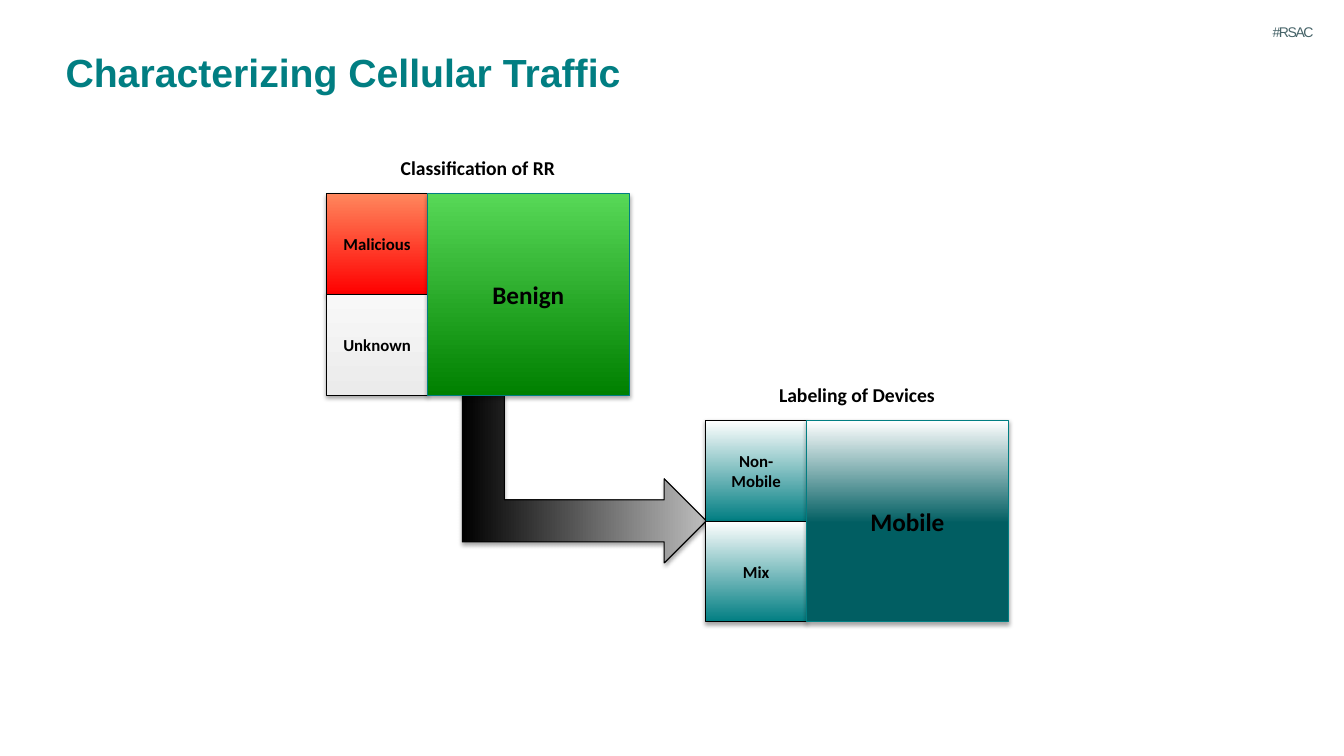
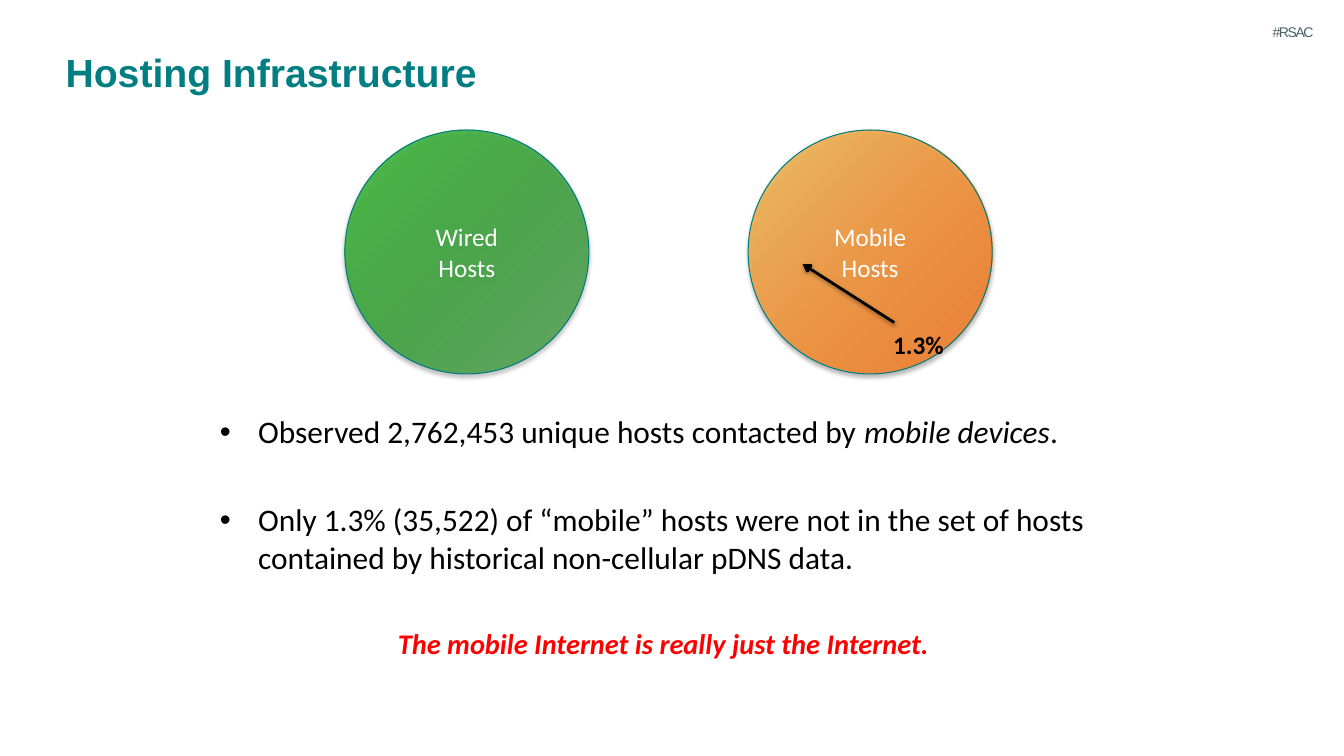
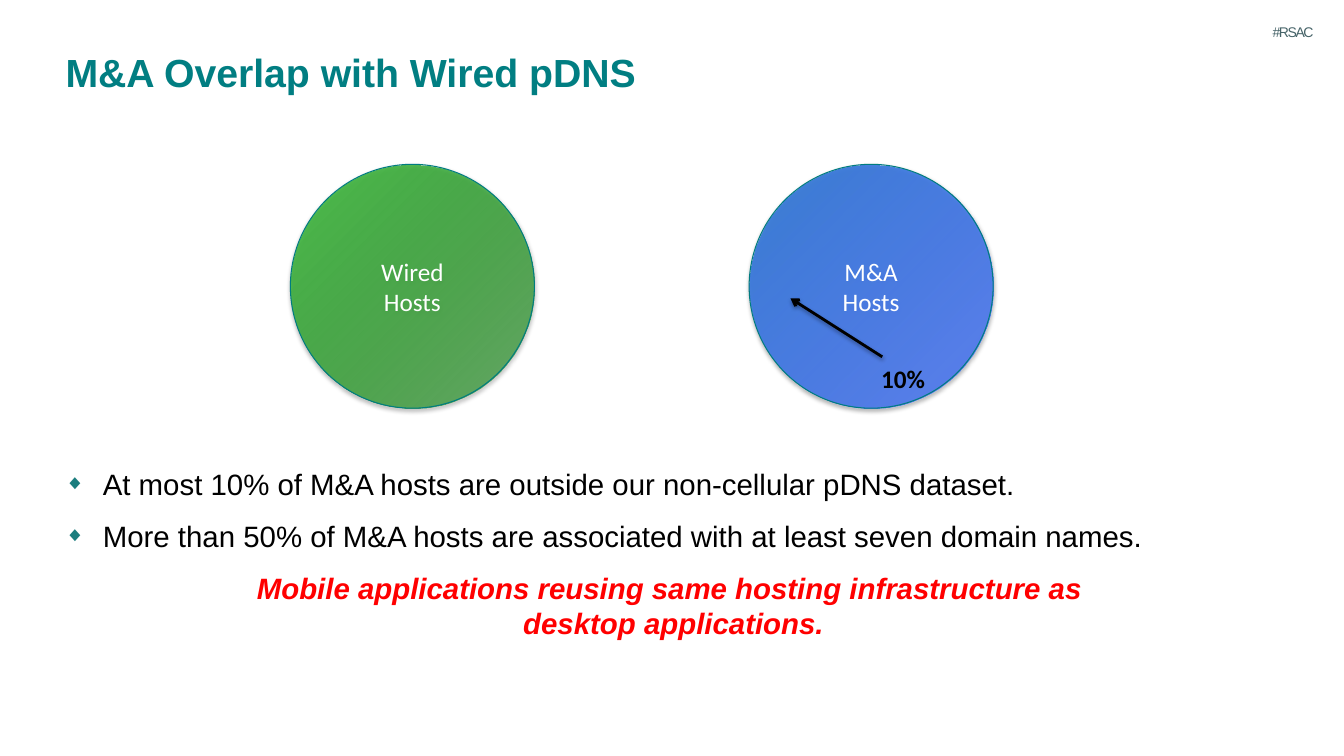
from copy import deepcopy
from dataclasses import dataclass

from pptx import Presentation
from pptx.dml.color import RGBColor
from pptx.enum.shapes import MSO_CONNECTOR, MSO_SHAPE
from pptx.enum.text import MSO_ANCHOR, MSO_AUTO_SIZE, PP_ALIGN
from pptx.oxml import parse_xml
from pptx.oxml.ns import nsdecls, qn
from pptx.util import Emu, Pt

RECT, OVAL, BENT_ARROW = MSO_SHAPE.RECTANGLE, MSO_SHAPE.OVAL, MSO_SHAPE.BENT_UP_ARROW
LEFT, CENTER = PP_ALIGN.LEFT, PP_ALIGN.CENTER
TOP, MIDDLE = MSO_ANCHOR.TOP, MSO_ANCHOR.MIDDLE
NO_AUTOFIT = MSO_AUTO_SIZE.NONE
STRAIGHT = MSO_CONNECTOR.STRAIGHT
TITLE_AND_BODY, TITLE_ONLY = 1, 5
EMU_PER_PX = 9144  # 100 px to the inch


@dataclass(frozen=True)
class Theme:
    head_font: str = "Arial"
    text_font: str = "Calibri"
    teal: str = "017E82"
    ring: str = "007C80"
    tag: str = "466368"
    bullet: str = "1B7D7E"
    black: str = "000000"
    white: str = "FFFFFF"
    red: str = "FF0000"
    # Gradients: (position %, colour, opacity %)
    malicious: tuple = ((0, "FF0000", 100), (100, "FF875D", 100))
    unknown: tuple = ((0, "EBEBEB", 100), (100, "F8F8F8", 100))
    benign: tuple = ((0, "008000", 100), (100, "57D857", 100))
    minor_device: tuple = ((0, "017E82", 100), (100, "FFFFFF", 100))
    mobile_device: tuple = ((49, "015E62", 100), (100, "FFFFFF", 100))
    flow: tuple = ((0, "000000", 100), (100, "BDBDBD", 100))
    wired: tuple = ((0, "008000", 50), (100, "4EBF4D", 100))
    mobile: tuple = ((0, "FF6600", 70), (100, "ECC169", 100))
    m_and_a: tuple = ((0, "3366FF", 70), (100, "3B7ED3", 100))
    # Type sizes
    title_size: float = 28
    tag_size: float = 10
    list_size: float = 22.4
    punch_size: float = 20.3
    body_size: float = 21
    large: float = 18
    caption: float = 14
    small: float = 12


T = Theme()


def px(n):
    return Emu(n * EMU_PER_PX)


def box(*lengths):
    return [px(n) for n in lengths]


# Text
def write(p, text, size=T.large, font=T.text_font, color=T.black, bold=False,
          italic=False, spacing=None):
    """Add text to a paragraph; a newline becomes a line break."""
    for i, line in enumerate(text.split("\n")):
        if i:
            p.add_line_break()
        r = p.add_run()
        r.text = line
        r.font.size, r.font.name = Pt(size), font
        r.font.bold, r.font.italic = bold, italic
        r.font.color.rgb = RGBColor.from_string(color)
        if spacing is not None:
            r._r.get_or_add_rPr().set("spc", str(spacing))
    for br in p._p.findall(qn("a:br")):
        if br.find(qn("a:rPr")) is None:
            br.append(deepcopy(r._r.rPr))


def add_paragraph(tf, align=LEFT, before=0, after=0):
    p = tf.paragraphs[0]
    first = not p.runs
    if not first:
        p = tf.add_paragraph()
    p.alignment = align
    p.space_before, p.space_after = Pt(0 if first else before), Pt(after)
    return p


def set_bullet(p, char=None, color=T.black, percent=100):
    """Give a paragraph a hanging bullet, or none."""
    pPr = p._p.get_or_add_pPr()
    indent = px(38) if char else 0
    pPr.set("marL", str(indent))
    pPr.set("indent", str(-indent))
    marks = (f'<a:buClr {nsdecls("a")}><a:srgbClr val="{color}"/></a:buClr>',
             f'<a:buSzPct {nsdecls("a")} val="{percent * 1000}"/>',
             f'<a:buFont {nsdecls("a")} typeface="Arial"/>',
             f'<a:buChar {nsdecls("a")} char="{char}"/>')
    for xml in marks if char else (f'<a:buNone {nsdecls("a")}/>',):
        pPr.append(parse_xml(xml))


def add_label(s, text, bounds, align=CENTER, wrap=True, **fmt):
    sp = s.shapes.add_textbox(*box(*bounds))
    sp.text_frame.word_wrap = wrap
    write(add_paragraph(sp.text_frame, align), text, **fmt)
    return sp


# Shapes
def set_gradient(sp, stops, radial=False):
    gs = "".join(
        f'<a:gs pos="{pos * 1000}"><a:srgbClr val="{color}">'
        f'<a:alpha val="{alpha * 1000}"/></a:srgbClr></a:gs>'
        for pos, color, alpha in stops)
    if radial:
        direction = ('<a:path path="circle">'
                     '<a:fillToRect l="100000" t="100000"/></a:path>')
    else:
        direction = '<a:lin ang="16200000" scaled="0"/>'
    sp._element.spPr.append(parse_xml(
        f'<a:gradFill {nsdecls("a")} rotWithShape="1">'
        f'<a:gsLst>{gs}</a:gsLst>{direction}</a:gradFill>'))


def set_line(sp, color, width):
    sp.line.color.rgb = RGBColor.from_string(color)
    sp.line.width = Pt(width)


def set_shadow(sp, distance=23000, alpha=35):
    sp._element.spPr.append(parse_xml(
        f'<a:effectLst {nsdecls("a")}><a:outerShdw blurRad="40000" '
        f'dist="{distance}" dir="5400000" rotWithShape="0">'
        f'<a:srgbClr val="000000"><a:alpha val="{alpha * 1000}"/></a:srgbClr>'
        '</a:outerShdw></a:effectLst>'))


def add_block(s, kind, bounds, stops, lines=(), outline=T.black, radial=False, **fmt):
    """Add a gradient shape with centred lines of text."""
    sp = s.shapes.add_shape(kind, *box(*bounds))
    set_gradient(sp, stops, radial)
    set_line(sp, outline, 0.75)
    set_shadow(sp)
    tf = sp.text_frame
    tf.word_wrap, tf.vertical_anchor = True, MIDDLE
    for line in lines:
        write(add_paragraph(tf, CENTER), line, **fmt)
    return sp


def add_arrow(s, start, end):
    cxn = s.shapes.add_connector(STRAIGHT, *box(*start, *end))
    set_line(cxn, T.black, 2)
    cxn.line._get_or_add_ln().append(
        parse_xml(f'<a:tailEnd {nsdecls("a")} type="arrow"/>'))
    set_shadow(cxn, 20000, 38)


# Parts that slides share
def add_slide(prs, layout, title):
    s = prs.slides.add_slide(prs.slide_layouts[layout])
    sp = s.shapes.title
    sp.left, sp.top, sp.width, sp.height = box(55, 11, 1194, 125)
    tf = sp.text_frame
    tf.auto_size, tf.vertical_anchor = NO_AUTOFIT, MIDDLE
    p = add_paragraph(tf)
    p.line_spacing = Pt(30)
    write(p, title, size=T.title_size, font=T.head_font, color=T.teal, bold=True)
    return s


def add_master_tag(prs, s):
    """Make the corner tag and place it on the slide master."""
    sp = add_label(s, "#RSAC", (1249, 23, 67, 17), size=T.tag_size,
                   font=T.head_font, color=T.tag, spacing=-100)
    tf = sp.text_frame
    tf.vertical_anchor = MIDDLE
    tf.margin_left = tf.margin_top = tf.margin_right = tf.margin_bottom = 0
    prs.slide_master.shapes._spTree.append(sp._element)


def open_body(s, bounds):
    sp = s.placeholders[1]
    sp.left, sp.top, sp.width, sp.height = box(*bounds)
    tf = sp.text_frame
    tf.auto_size, tf.vertical_anchor, tf.word_wrap = NO_AUTOFIT, TOP, True
    return tf


def add_quartet(s, x, y, heading, cells):
    """Add two small squares beside one large square, under a heading."""
    side = 100
    (top, top_fill), (low, low_fill), (main_text, main_fill) = cells
    for i, (text, stops) in enumerate(((top, top_fill), (low, low_fill))):
        add_block(s, RECT, (x, y + i * side, side, side), stops, [text],
                  size=T.small, bold=True)
    add_block(s, RECT, (x + side, y, 2 * side, 2 * side), main_fill, [main_text],
              outline=T.teal, size=T.large, bold=True)
    add_label(s, heading, (x, y - 42, 3 * side, 34), size=T.caption, bold=True)


def add_host_circles(s, y, wired_x, other_x, other, stops, share, note_x):
    """Add wired hosts, another group of hosts and the share outside wired."""
    circles = ((wired_x, "Wired", T.wired), (other_x, other, stops))
    for x, name, fill in circles:
        add_block(s, OVAL, (x, y, 242, 242), fill, [name, "Hosts"],
                  outline=T.ring, radial=True, color=T.white)
    add_arrow(s, (note_x + 11, y + 191), (note_x - 80, y + 133))
    add_label(s, share, (note_x, y + 193, 70, 40), align=LEFT, wrap=False, bold=True)


# Slides
def build_traffic(prs):
    s = add_slide(prs, TITLE_ONLY, "Characterizing Cellular Traffic")
    add_master_tag(prs, s)
    flow = add_block(s, BENT_ARROW, (496, 354, 167, 242), T.flow)
    flow.rotation = 90
    add_quartet(s, 700, 417, "Labeling of Devices",
                (("Non-Mobile", T.minor_device), ("Mix", T.minor_device),
                 ("Mobile", T.mobile_device)))
    add_quartet(s, 324, 192, "Classification of RR",
                (("Malicious", T.malicious), ("Unknown", T.unknown),
                 ("Benign", T.benign)))


def build_hosting(prs):
    s = add_slide(prs, TITLE_AND_BODY, "Hosting Infrastructure")
    tf = open_body(s, (208, 404, 900, 250))
    bullets = (
        (("Observed 2,762,453 unique hosts contacted by ", False),
         ("mobile devices", True), (".", False)),
        (("Only 1.3% (35,522) of “mobile” hosts were not in the set of hosts "
          "contained by historical non-cellular pDNS data.", False),),
    )
    for parts in bullets:
        p = add_paragraph(tf, before=36)
        set_bullet(p, "•")
        for text, italic in parts:
            write(p, text, size=T.list_size, italic=italic)
    p = add_paragraph(tf, CENTER, before=36)
    set_bullet(p)
    write(p, "The mobile Internet is really just the Internet.",
          size=T.punch_size, color=T.red, bold=True, italic=True)
    add_host_circles(s, 129, 342, 742, "Mobile", T.mobile, "1.3%", 876)


def build_overlap(prs):
    s = add_slide(prs, TITLE_AND_BODY, "M&A Overlap with Wired pDNS")
    tf = open_body(s, (54, 457, 1228, 206))
    for text in (
            "At most 10% of M&A hosts are outside our non-cellular pDNS dataset.",
            "More than 50% of M&A hosts are associated with at least seven domain names."):
        p = add_paragraph(tf, before=8, after=4)
        set_bullet(p, "◆", T.bullet, 70)
        write(p, text, size=T.body_size, font=T.head_font)
    p = add_paragraph(tf, CENTER, before=8, after=4)
    set_bullet(p)
    write(p, "Mobile applications reusing same hosting infrastructure as \n"
             "desktop applications.",
          size=T.body_size, font=T.head_font, color=T.red, bold=True, italic=True)
    add_host_circles(s, 163, 288, 743, "M&A", T.m_and_a, "10%", 864)


def main():
    prs = Presentation()
    prs.slide_width, prs.slide_height = box(1333, 750)
    build_traffic(prs)
    build_hosting(prs)
    build_overlap(prs)
    prs.save("out.pptx")


if __name__ == "__main__":
    main()
